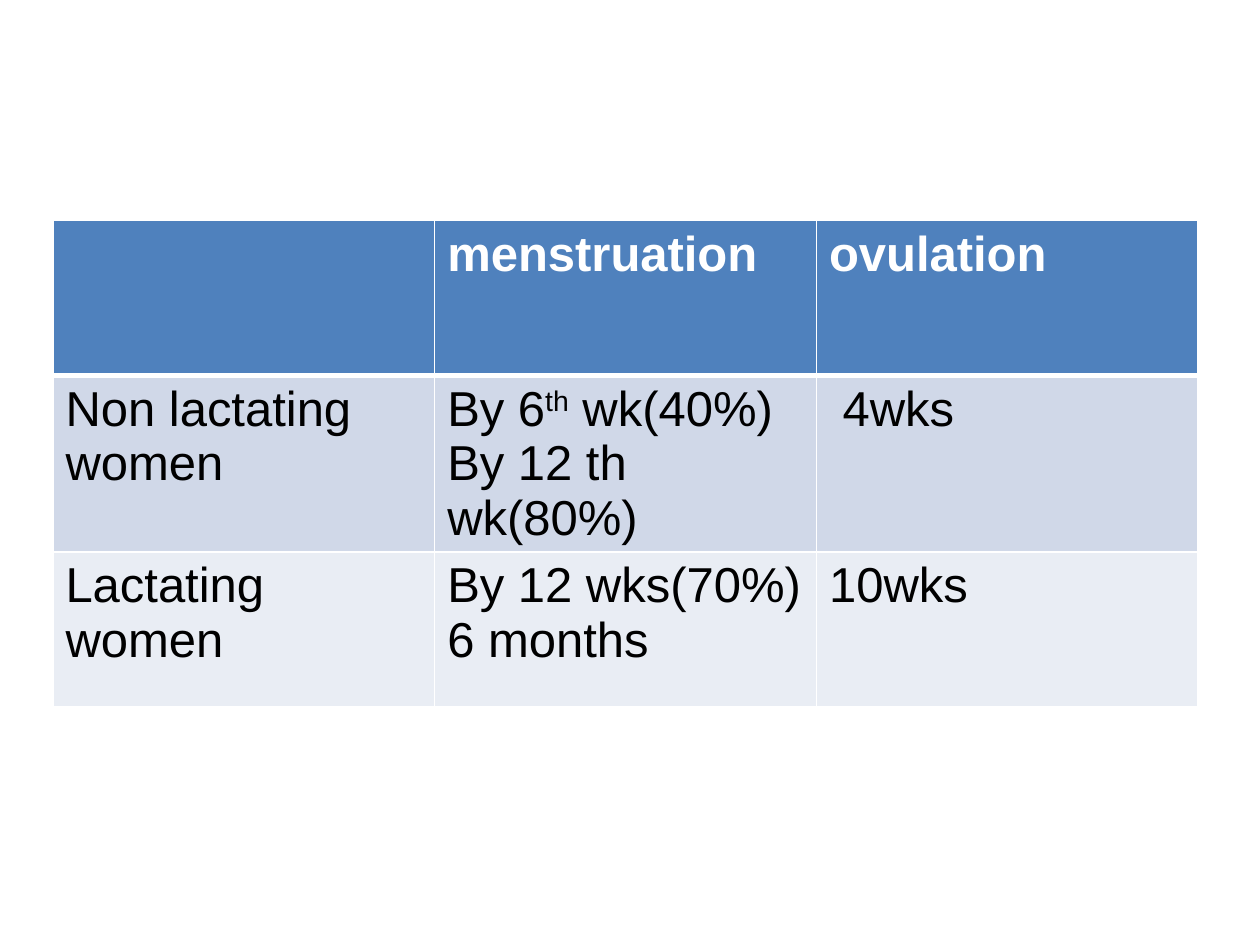
from dataclasses import dataclass

from lxml import etree
from pptx import Presentation
from pptx import util as u
from pptx.dml.color import RGBColor
from pptx.oxml.ns import qn


@dataclass(frozen=True)
class Theme:
    font: str = "Arial"
    size: int = 28
    line: str = "FFFFFF"
    thin: int = 1
    thick: int = 3


@dataclass(frozen=True)
class Row:
    fill: str
    color: str
    bold: bool
    top: int
    bottom: int
    cells: tuple[str, ...]


THEME = Theme()
SUPERSCRIPT = "^"  # encloses raised text
ROWS = (
    Row("4F81BD", "FFFFFF", True, THEME.thin, THEME.thick,
        ("", "menstruation", "ovulation")),
    Row("D0D8E8", "000000", False, THEME.thick, THEME.thin,
        ("Non lactating women", "By 6^th^ wk(40%)\nBy 12 th wk(80%)", " 4wks")),
    Row("E9EDF4", "000000", False, THEME.thin, THEME.thin,
        ("Lactating women", "By 12 wks(70%)\n6 months", "10wks")),
)
SLIDE_WIDTH, SLIDE_HEIGHT = u.Inches(10), u.Inches(7.5)
LEFT, TOP = u.Inches(0.42), u.Inches(1.75)
COLUMN_WIDTH, ROW_HEIGHT = u.Inches(3.03), u.Inches(1.23)


def style_font(font, row: Row) -> None:
    font.name = THEME.font
    font.size = u.Pt(THEME.size)
    font.bold = row.bold
    font.color.rgb = RGBColor.from_string(row.color)


def write_paragraph(paragraph, line: str, row: Row) -> None:
    """Write one line, raising every part enclosed in SUPERSCRIPT."""
    style_font(paragraph.font, row)
    for index, part in enumerate(line.split(SUPERSCRIPT)):
        run = paragraph.add_run()
        run.text = part
        style_font(run.font, row)
        if index % 2:
            run._r.get_or_add_rPr().set("baseline", "30000")


def set_borders(cell, row: Row) -> None:
    properties = cell._tc.get_or_add_tcPr()
    widths = {"lnL": THEME.thin, "lnR": THEME.thin, "lnT": row.top, "lnB": row.bottom}
    for index, (tag, width) in enumerate(widths.items()):
        line = etree.Element(qn(f"a:{tag}"), w=str(u.Pt(width)))
        fill = etree.SubElement(line, qn("a:solidFill"))
        etree.SubElement(fill, qn("a:srgbClr"), val=THEME.line)
        properties.insert(index, line)


def draw_cell(cell, content: str, row: Row) -> None:
    cell.fill.solid()
    cell.fill.fore_color.rgb = RGBColor.from_string(row.fill)
    set_borders(cell, row)
    cell.text_frame.text = "\n" * content.count("\n")
    for paragraph, line in zip(cell.text_frame.paragraphs, content.split("\n")):
        write_paragraph(paragraph, line, row)


def draw_table(slide, rows: tuple[Row, ...]) -> None:
    columns = len(rows[0].cells)
    table = slide.shapes.add_table(
        len(rows), columns, LEFT, TOP,
        COLUMN_WIDTH * columns, ROW_HEIGHT * len(rows)).table
    for column in table.columns:
        column.width = COLUMN_WIDTH
    for row_index, row in enumerate(rows):
        table.rows[row_index].height = ROW_HEIGHT
        for column_index, content in enumerate(row.cells):
            draw_cell(table.cell(row_index, column_index), content, row)


def main() -> None:
    presentation = Presentation()
    presentation.slide_width, presentation.slide_height = SLIDE_WIDTH, SLIDE_HEIGHT
    slide = presentation.slides.add_slide(presentation.slide_layouts[6])
    draw_table(slide, ROWS)
    presentation.save("out.pptx")


if __name__ == "__main__":
    main()
